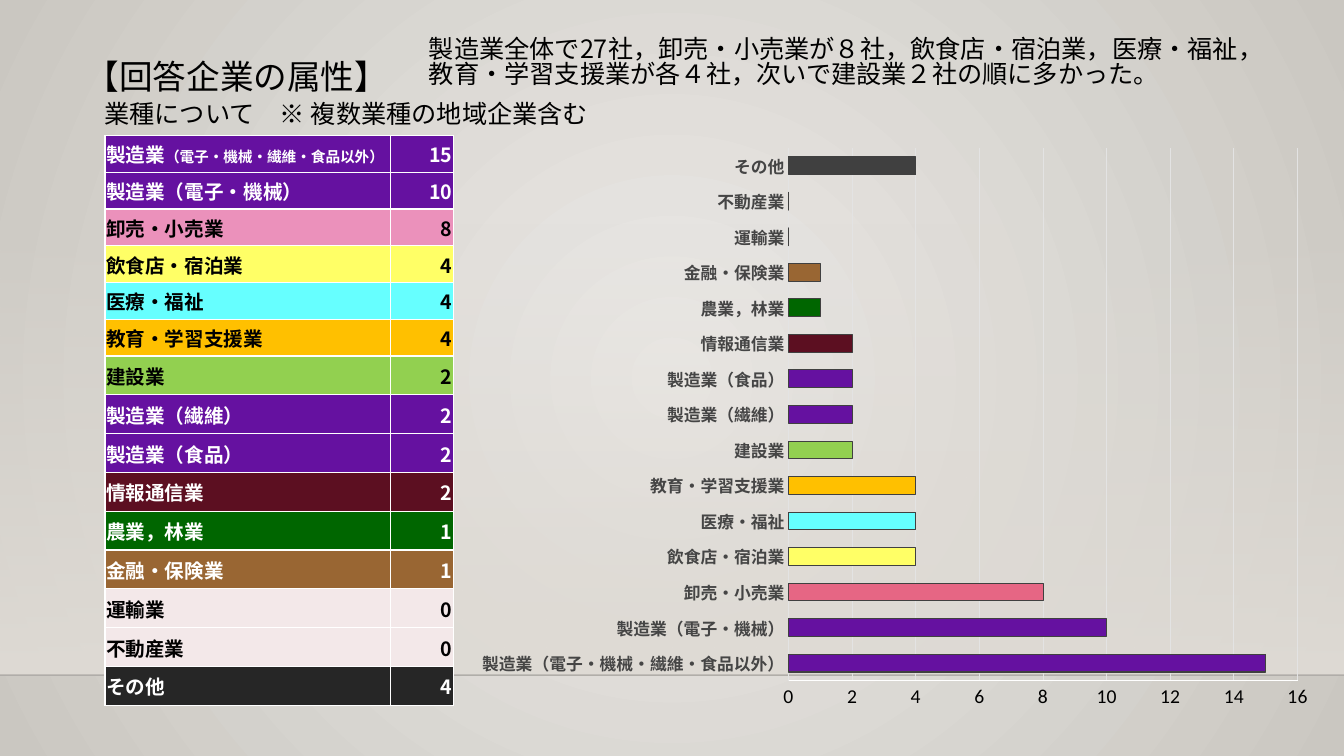
from dataclasses import dataclass
from typing import Optional

from lxml import etree
from pptx import Presentation
from pptx import util as u
from pptx.chart.data import CategoryChartData
from pptx.dml.color import RGBColor
from pptx.enum import chart as charts, shapes, text
from pptx.oxml import parse_xml
from pptx.oxml.ns import nsdecls, qn

EMU_PER_PX = 9525
LATIN, GOTHIC = "Calibri", "Noto Sans CJK JP"
COLORS = {
    "black": "000000", "white": "FFFFFF", "label": "454545", "outline": "404040",
    "grid": "E3E3E3", "glow": "ECEAE7", "edge": "CAC7C1", "floor": "DFDBD5",
    "horizon": "000001", "purple": "6511A0", "pink": "EB91BB", "rose": "E66684",
    "yellow": "FFFF66", "cyan": "66FFFF", "amber": "FFC000", "lime": "92D050",
    "wine": "5C0F21", "green": "006600", "brown": "996633", "blush": "F3E8E9",
    "charcoal": "262626",
}


@dataclass(frozen=True)
class Industry:
    name: str
    count: int
    row: str
    ink: str = "white"
    bar: Optional[str] = None
    note: str = ""


@dataclass(frozen=True)
class Caption:
    words: str
    box: tuple[int, int, int, int]
    font: str
    spacing: float


INDUSTRIES = [
    Industry("製造業", 15, "purple", note="（電子・機械・繊維・食品以外）"),
    Industry("製造業（電子・機械）", 10, "purple"),
    Industry("卸売・小売業", 8, "pink", "black", "rose"),
    Industry("飲食店・宿泊業", 4, "yellow", "black"),
    Industry("医療・福祉", 4, "cyan", "black"),
    Industry("教育・学習支援業", 4, "amber", "black"),
    Industry("建設業", 2, "lime", "black"),
    Industry("製造業（繊維）", 2, "purple"),
    Industry("製造業（食品）", 2, "purple"),
    Industry("情報通信業", 2, "wine"),
    Industry("農業，林業", 1, "green"),
    Industry("金融・保険業", 1, "brown"),
    Industry("運輸業", 0, "blush", "black"),
    Industry("不動産業", 0, "blush", "black"),
    Industry("その他", 4, "charcoal", bar="outline"),
]
CAPTIONS = [
    Caption("業種について　※ 複数業種の地域企業含む", (90, 89, 550, 38), LATIN, 1.0),
    Caption("製造業全体で27社，卸売・小売業が８社，飲食店・宿泊業，医療・福祉，"
            "教育・学習支援業が各４社，次いで建設業２社の順に多かった。",
            (399, 32, 808, 68), GOTHIC, 0.83),
]


def px(length: int) -> u.Emu:
    return u.Emu(length * EMU_PER_PX)


def place(*lengths: int) -> list[u.Emu]:
    return [px(length) for length in lengths]


def rgb(color: str) -> RGBColor:
    return RGBColor.from_string(COLORS[color])


def style_font(font, size: float, color: str, name: str, bold: bool = False) -> None:
    font.size, font.bold, font.name = u.Pt(size), bold, name
    font.color.rgb = rgb(color)


def add_run(paragraph, words: str, size: float, color: str, name: str,
            bold: bool = False) -> None:
    run = paragraph.add_run()
    run.text = words
    style_font(run.font, size, color, name, bold)
    if name == GOTHIC:
        etree.SubElement(run.font._element, qn("a:ea"), typeface=name)


def style_line(line, color: str, width: float) -> None:
    line.color.rgb = rgb(color)
    line.width = u.Pt(width)


def set_alpha(fill_element, percent: int) -> None:
    etree.SubElement(fill_element, qn("a:alpha"), val=str(percent * 1000))


def paint_backdrop(slide) -> None:
    fill = slide.background.fill
    fill.gradient()
    for stop, color in zip(fill.gradient_stops, ("glow", "edge")):
        stop.color.rgb = rgb(color)
    direction = next(slide.background._cSld.iter(qn("a:lin")))
    direction.getparent().replace(direction, parse_xml(
        f'<a:path {nsdecls("a")} path="circle">'
        '<a:fillToRect l="50000" t="50000" r="50000" b="50000"/></a:path>'))

    floor = slide.shapes.add_shape(shapes.MSO_SHAPE.RECTANGLE, *place(0, 212, 1280, 431))
    floor.shadow.inherit = False
    floor.line.fill.background()
    floor.fill.gradient()
    for stop in floor.fill.gradient_stops:
        stop.color.rgb = rgb("floor")
    set_alpha(next(floor._element.iter(qn("a:srgbClr"))), 0)
    next(floor._element.iter(qn("a:lin"))).set("ang", "5400000")

    horizon = slide.shapes.add_connector(
        shapes.MSO_CONNECTOR.STRAIGHT, *place(0, 643, 1280, 643))
    style_line(horizon.line, "horizon", 1)
    set_alpha(next(horizon._element.iter(qn("a:srgbClr"))), 20)
    etree.SubElement(horizon._element.spPr, qn("a:effectLst"))
    horizon._element.addnext(slide.shapes.title._element)


def write_title(title) -> None:
    title.left, title.top, title.width, title.height = place(72, 48, 1136, 48)
    title.text_frame.vertical_anchor = text.MSO_ANCHOR.MIDDLE
    paragraph = title.text_frame.paragraphs[0]
    paragraph.alignment = text.PP_ALIGN.LEFT
    add_run(paragraph, "【回答企業の属性】", 24, "black", LATIN)


def add_caption(slide, caption: Caption) -> None:
    frame = slide.shapes.add_textbox(*place(*caption.box)).text_frame
    frame.word_wrap = True
    paragraph = frame.paragraphs[0]
    paragraph.line_spacing = caption.spacing
    add_run(paragraph, caption.words, 18, "black", caption.font)


def style_cell(cell, color: str) -> None:
    cell.margin_left = cell.margin_top = cell.margin_right = px(1)
    cell.margin_bottom = 0
    cell.vertical_anchor = text.MSO_ANCHOR.MIDDLE
    properties = cell._tc.get_or_add_tcPr()
    for side in ("lnL", "lnR", "lnT", "lnB"):
        properties.append(parse_xml(
            f'<a:{side} {nsdecls("a")} w="12700"><a:solidFill>'
            f'<a:srgbClr val="{COLORS["white"]}"/></a:solidFill></a:{side}>'))
    cell.fill.solid()
    cell.fill.fore_color.rgb = rgb(color)


def add_industry_table(slide) -> None:
    table = slide.shapes.add_table(len(INDUSTRIES), 2, *place(100, 129, 332, 543)).table
    table.first_row = table.horz_banding = False
    for column, width in zip(table.columns, (272, 60)):
        column.width = px(width)
    for index, industry in enumerate(INDUSTRIES):
        table.rows[index].height = px(35 if index < 6 else 37)
        name_cell, count_cell = table.cell(index, 0), table.cell(index, 1)
        for cell, words in ((name_cell, industry.name), (count_cell, str(industry.count))):
            style_cell(cell, industry.row)
            add_run(cell.text_frame.paragraphs[0], words, 14, industry.ink, GOTHIC, True)
        count_cell.text_frame.paragraphs[0].alignment = text.PP_ALIGN.RIGHT
        if industry.note:
            add_run(name_cell.text_frame.paragraphs[0], industry.note, 10.5,
                    industry.ink, GOTHIC, True)


def add_industry_chart(slide) -> None:
    data = CategoryChartData()
    data.categories = [industry.name + industry.note for industry in INDUSTRIES]
    data.add_series("回答企業数", [industry.count for industry in INDUSTRIES])
    chart = slide.shapes.add_chart(
        charts.XL_CHART_TYPE.BAR_CLUSTERED, *place(444, 124, 808, 564), data).chart
    chart.has_legend = chart.has_title = False
    style_font(chart.font, 10, "black", LATIN)

    plot = chart.plots[0]
    plot.gap_width, plot.vary_by_categories = 100, False
    for index, industry in enumerate(INDUSTRIES):
        bar = plot.series[0].points[index].format
        bar.fill.solid()
        bar.fill.fore_color.rgb = rgb(industry.bar or industry.row)
        style_line(bar.line, "outline", 0.75)

    names, counts = chart.category_axis, chart.value_axis
    for axis, color in ((names, "grid"), (counts, "white")):
        axis.major_tick_mark = axis.minor_tick_mark = charts.XL_TICK_MARK.NONE
        style_line(axis.format.line, color, 0.75)
    style_font(names.tick_labels.font, 12, "label", LATIN, True)
    style_font(counts.tick_labels.font, 14, "black", LATIN)
    counts.minimum_scale, counts.maximum_scale, counts.major_unit = 0, 16, 2
    style_line(counts.major_gridlines.format.line, "grid", 0.75)

    area = chart._chartSpace.chart.plotArea
    for old in area.findall(qn("c:layout")):
        area.remove(old)
    area.insert(0, parse_xml(
        f'<c:layout {nsdecls("c")}><c:manualLayout><c:layoutTarget val="inner"/>'
        '<c:xMode val="edge"/><c:yMode val="edge"/><c:x val="0.38"/><c:y val="0.03"/>'
        '<c:w val="0.6"/><c:h val="0.9"/></c:manualLayout></c:layout>'))


def main() -> None:
    deck = Presentation()
    deck.slide_width, deck.slide_height = place(1280, 720)
    slide = deck.slides.add_slide(deck.slide_layouts[5])
    paint_backdrop(slide)
    write_title(slide.shapes.title)
    for caption in CAPTIONS:
        add_caption(slide, caption)
    add_industry_table(slide)
    add_industry_chart(slide)
    deck.save("out.pptx")


if __name__ == "__main__":
    main()
